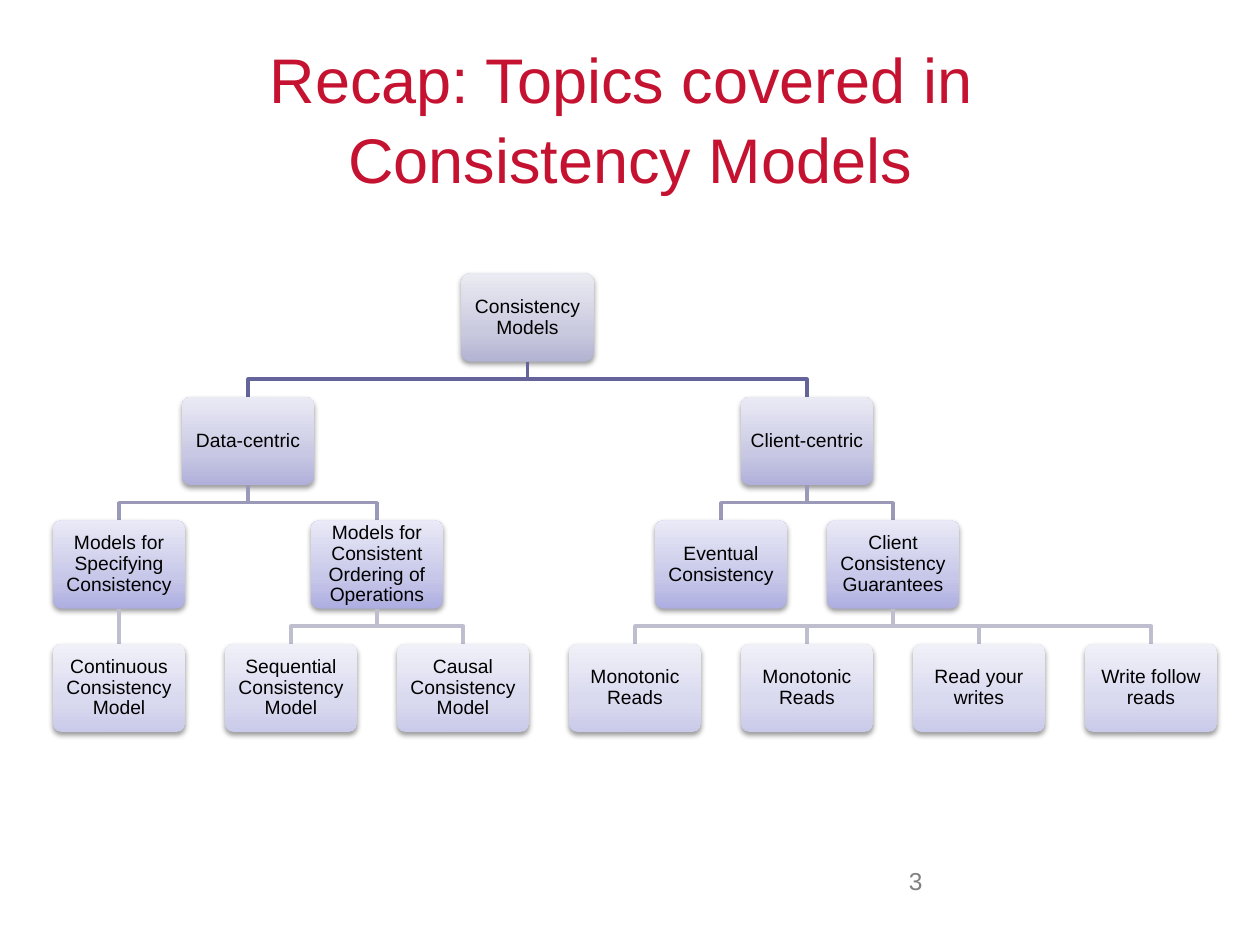
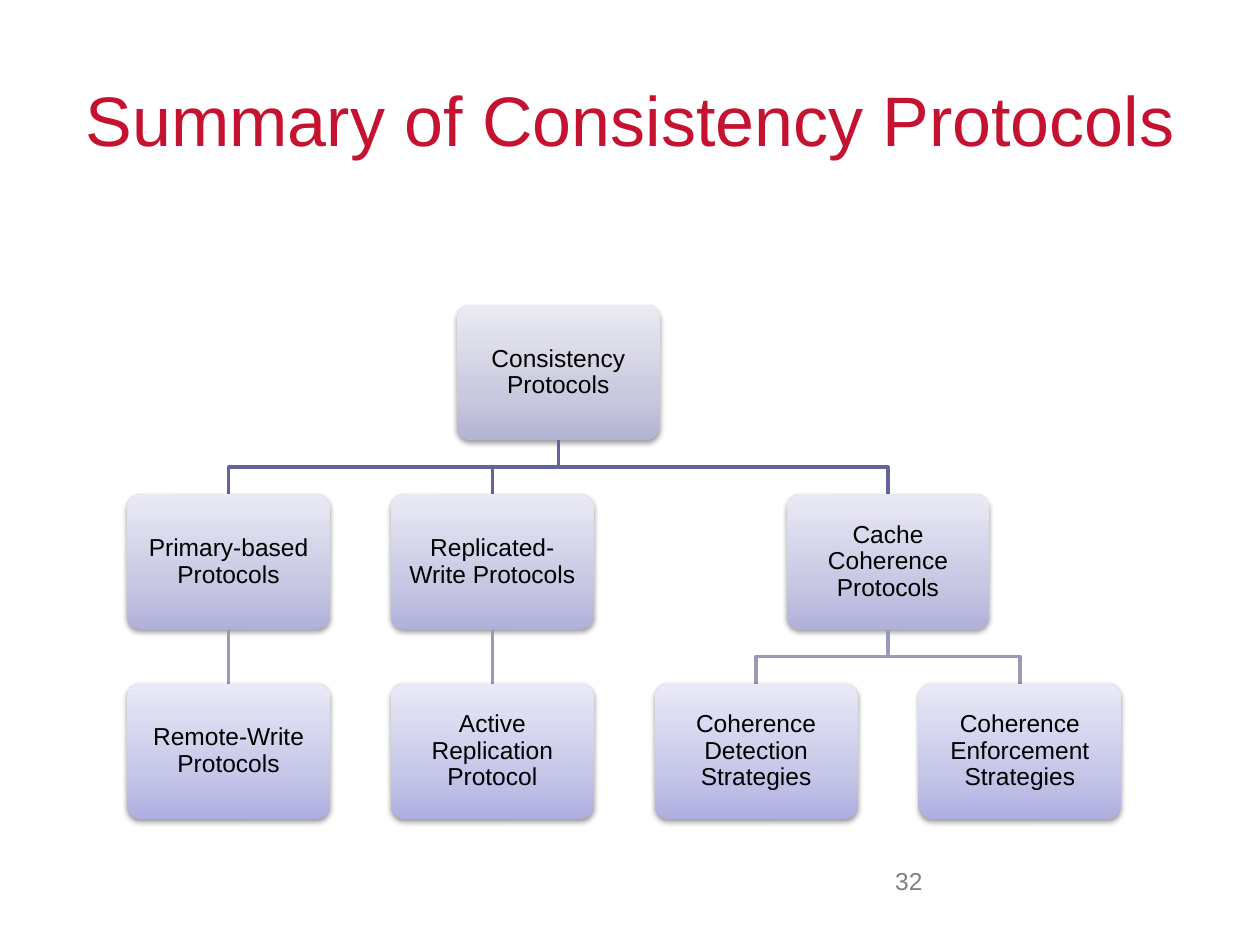
"""Build two slides that show consistency topics as tree diagrams."""
from copy import deepcopy
from dataclasses import dataclass

from lxml import etree
from pptx import Presentation
from pptx import util as u
from pptx.dml.color import RGBColor
from pptx.enum import shapes, text
from pptx.oxml import ns

WIDTH, HEIGHT = 10, 7.5
FONT = "Arial"
TITLE_COLOUR, NUMBER_COLOUR, LABEL_COLOUR = "C41230", "808080", "000000"
STOP_POSITIONS = (0, 0.35, 1)
LEVEL_GRADIENTS = (
    ("B3B3D3", "CACADF", "EBEBF3"),
    ("B0B0DA", "C8C8E4", "EAEAF5"),
    ("AEAEE1", "C7C7E9", "E9E9F7"),
    ("CACAEA", "D9D9EF", "F0F0F9"),
)
BRANCH_COLOURS = ("64649B", "9A9AB8", "BEBECF")


@dataclass
class Node:
    """A labelled box; a leaf has a column, a parent is centred on its children."""
    label: str
    column: float = 0
    children: tuple = ()

    def __post_init__(self):
        if self.children:
            self.column = (self.children[0].column + self.children[-1].column) / 2


@dataclass
class Grid:
    """Box positions, all derived from the extent and the number of columns."""
    left: float
    top: float
    width: float
    columns: int
    size: int

    def __post_init__(self):
        self.box_width = self.width / (1.3 * (self.columns - 1) + 1)
        self.box_height = self.box_width * 2 / 3
        self.column_step = 1.3 * self.box_width
        self.row_step = 1.4 * self.box_height

    def box(self, node, level):
        """Return left, top, width and height of a node in inches."""
        return (self.left + node.column * self.column_step,
                self.top + level * self.row_step, self.box_width, self.box_height)


def inches(*lengths):
    """Convert lengths in inches to whole drawing units."""
    return [u.Inches(length) for length in lengths]


def colour(value):
    """Turn a hex string into a colour."""
    return RGBColor.from_string(value)


def write(shape, content, *, size, fill, align=text.PP_ALIGN.CENTER,
          anchor=text.MSO_ANCHOR.MIDDLE, spacing=None, inset=None):
    """Put one formatted paragraph into a shape."""
    frame = shape.text_frame
    frame.word_wrap = True
    frame.vertical_anchor = anchor
    if inset is not None:
        frame.margin_left = frame.margin_right = u.Inches(inset)
        frame.margin_top = frame.margin_bottom = u.Inches(inset)
    paragraph = frame.paragraphs[0]
    paragraph.text = content
    paragraph.alignment = align
    paragraph.line_spacing = spacing
    for run in paragraph.runs:
        run.font.name = FONT
        run.font.size = u.Pt(size)
        run.font.color.rgb = colour(fill)


def add_text(slide, area, content, **style):
    """Add a text box in an area given in inches."""
    write(slide.shapes.add_textbox(*inches(*area)), content, **style)


def paint_gradient(shape, hex_stops):
    """Fill a shape with a three-stop gradient rising from its base."""
    shape.fill.gradient()
    shape.fill.gradient_angle = 90
    stop_list = shape._element.spPr.find(f".//{ns.qn('a:gsLst')}")
    stop_list.append(deepcopy(stop_list[0]))
    for stop, position, value in zip(shape.fill.gradient_stops, STOP_POSITIONS, hex_stops):
        stop.position = position
        stop.color.rgb = colour(value)


def add_shadow(shape):
    """Give a shape a soft shadow that falls downwards."""
    shape.shadow.inherit = False
    effects = shape._element.spPr.find(ns.qn("a:effectLst"))
    shadow = etree.SubElement(effects, ns.qn("a:outerShdw"), blurRad=str(u.Pt(3.1)),
                              dist=str(u.Pt(1.6)), dir="5400000", rotWithShape="0")
    black = etree.SubElement(shadow, ns.qn("a:srgbClr"), val="000000")
    etree.SubElement(black, ns.qn("a:alpha"), val="38000")


def add_box(slide, grid, node, level):
    """Draw the rounded box of a node with its label."""
    box = slide.shapes.add_shape(shapes.MSO_SHAPE.ROUNDED_RECTANGLE,
                                 *inches(*grid.box(node, level)))
    box.adjustments[0] = 0.1
    box.line.fill.background()
    paint_gradient(box, LEVEL_GRADIENTS[level])
    add_shadow(box)
    write(box, node.label, size=grid.size, fill=LABEL_COLOUR, spacing=0.9,
          inset=0.04 * grid.box_width)


def add_branch(slide, grid, parent, child, level):
    """Draw the line from a parent down to its child."""
    parent_left, parent_top, width, height = grid.box(parent, level)
    child_left, child_top, _, _ = grid.box(child, level + 1)
    start_x, start_y, end_x, end_y = inches(
        parent_left + width / 2, parent_top + height, child_left + width / 2, child_top)
    if start_x == end_x:
        branch = slide.shapes.add_connector(
            shapes.MSO_CONNECTOR.STRAIGHT, start_x, start_y, end_x, end_y)
        etree.SubElement(branch._element.spPr, ns.qn("a:effectLst"))
    else:
        middle = (start_y + end_y) // 2
        builder = slide.shapes.build_freeform(start_x, start_y)
        builder.add_line_segments(
            [(start_x, middle), (end_x, middle), (end_x, end_y)], close=False)
        branch = builder.convert_to_shape()
        branch.fill.background()
        branch.shadow.inherit = False
    branch.line.color.rgb = colour(BRANCH_COLOURS[level])
    branch.line.width = u.Pt(2)


def add_tree(slide, grid, node, level=0):
    """Draw a node, then each branch and subtree below it."""
    add_box(slide, grid, node, level)
    for child in node.children:
        add_branch(slide, grid, node, child, level)
        add_tree(slide, grid, child, level + 1)


def add_tree_slide(presentation, title, title_size, margin, number, grid, root):
    """Add a slide with a title, a slide number and a tree."""
    slide = presentation.slides.add_slide(presentation.slide_layouts[6])
    add_text(slide, (margin, 0.04 * HEIGHT, WIDTH - 2 * margin, HEIGHT / 6), title,
             size=title_size, fill=TITLE_COLOUR, spacing=1.05)
    add_text(slide, (0.65 * WIDTH, 0.91 * HEIGHT, 0.92, 0.52), number, size=14,
             fill=NUMBER_COLOUR, align=text.PP_ALIGN.RIGHT, anchor=text.MSO_ANCHOR.TOP)
    add_tree(slide, grid, root)


def models_tree():
    """Return the topics of consistency models."""
    specifying = Node("Models for Specifying Consistency", children=(
        Node("Continuous Consistency Model", 0),))
    ordering = Node("Models for Consistent Ordering of Operations", children=(
        Node("Sequential Consistency Model", 1),
        Node("Causal Consistency Model", 2)))
    guarantees = Node("Client Consistency Guarantees", children=(
        Node("Monotonic Reads", 3), Node("Monotonic Reads", 4),
        Node("Read your writes", 5), Node("Write follow reads", 6)))
    eventual = Node("Eventual Consistency", guarantees.column - 1)
    return Node("Consistency Models", children=(
        Node("Data-centric", children=(specifying, ordering)),
        Node("Client-centric", children=(eventual, guarantees))))


def protocols_tree():
    """Return the topics of consistency protocols."""
    return Node("Consistency Protocols", children=(
        Node("Primary-based Protocols", children=(
            Node("Remote-Write Protocols", 0),)),
        Node("Replicated-Write Protocols", children=(
            Node("Active Replication Protocol", 1),)),
        Node("Cache Coherence Protocols", children=(
            Node("Coherence Detection Strategies", 2),
            Node("Coherence Enforcement Strategies", 3)))))


def main():
    """Build and save the presentation."""
    presentation = Presentation()
    presentation.slide_width, presentation.slide_height = inches(WIDTH, HEIGHT)
    add_tree_slide(presentation, "Recap: Topics covered in \nConsistency Models", 36, 0.17,
                   "3", Grid(0.42, 2.17, 9.24, 7, 11), models_tree())
    add_tree_slide(presentation, "Summary of Consistency Protocols", 40, 0.5,
                   "32", Grid(1.01, 2.42, 7.89, 4, 14), protocols_tree())
    presentation.save("out.pptx")


if __name__ == "__main__":
    main()
